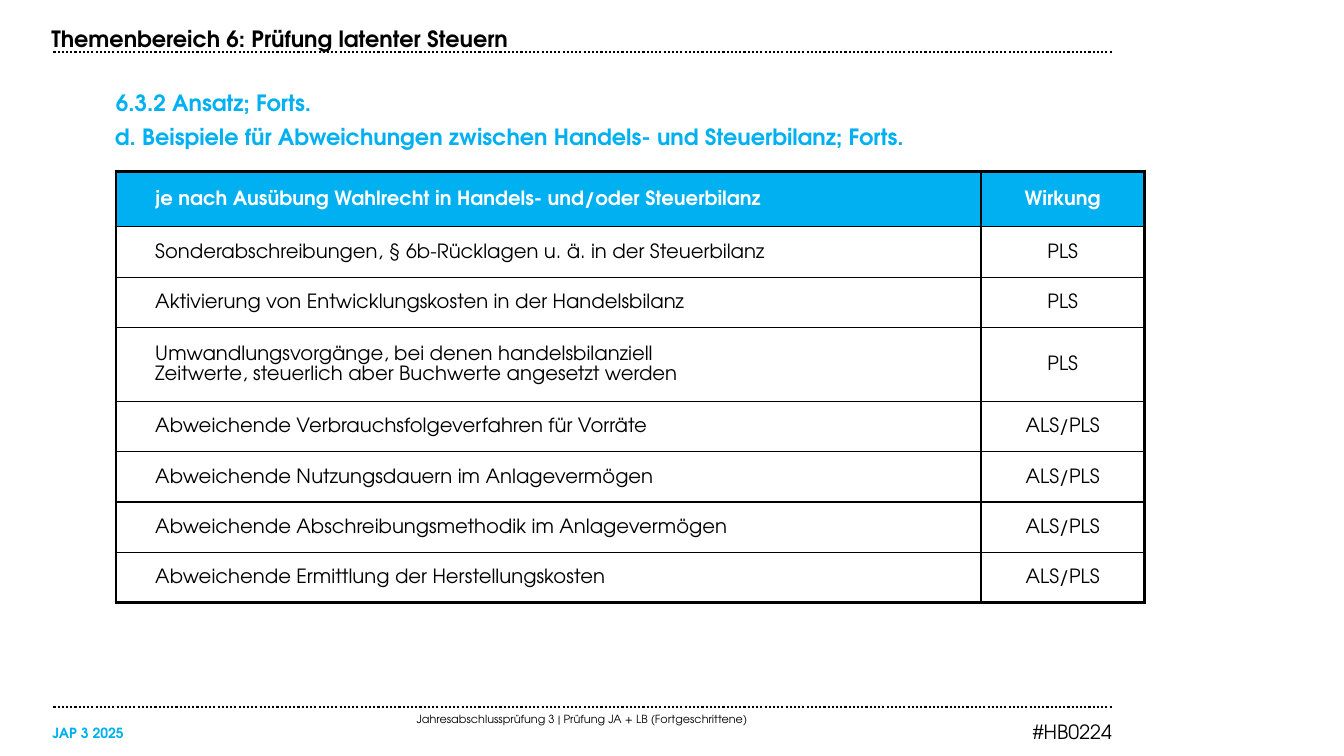
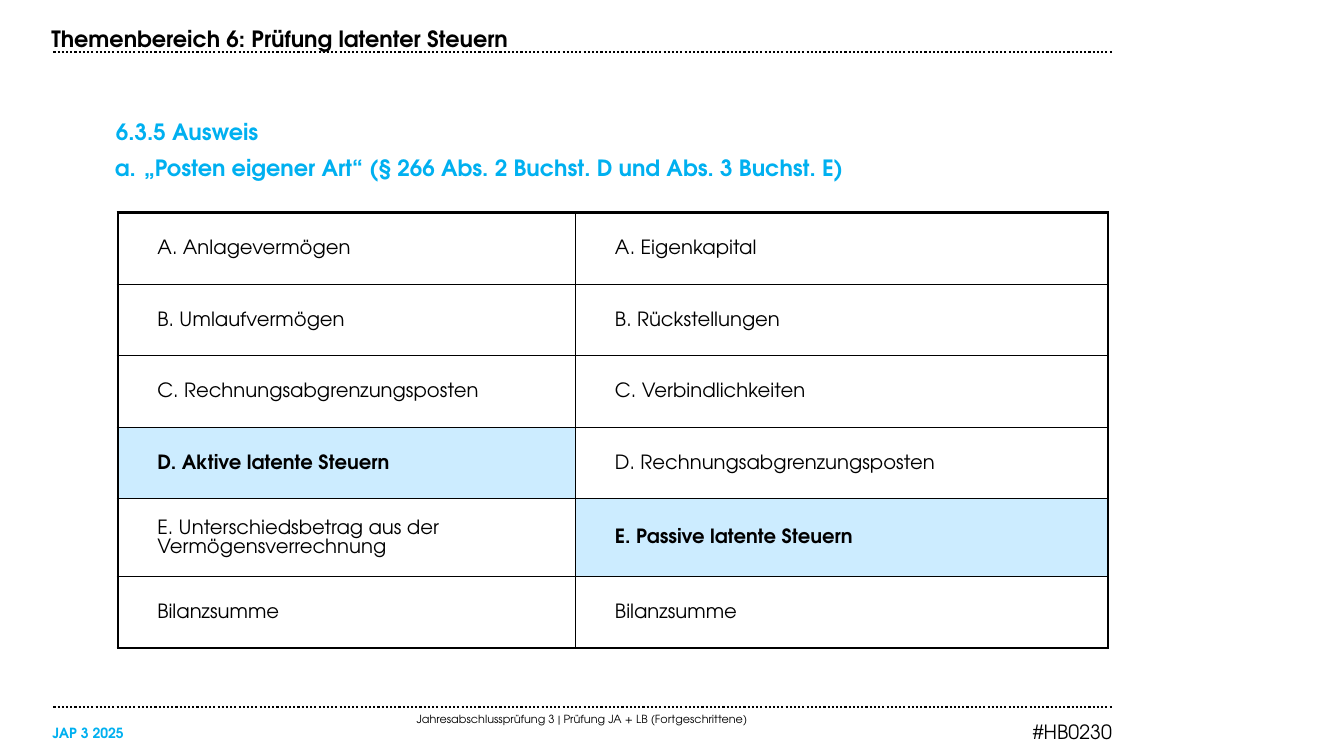
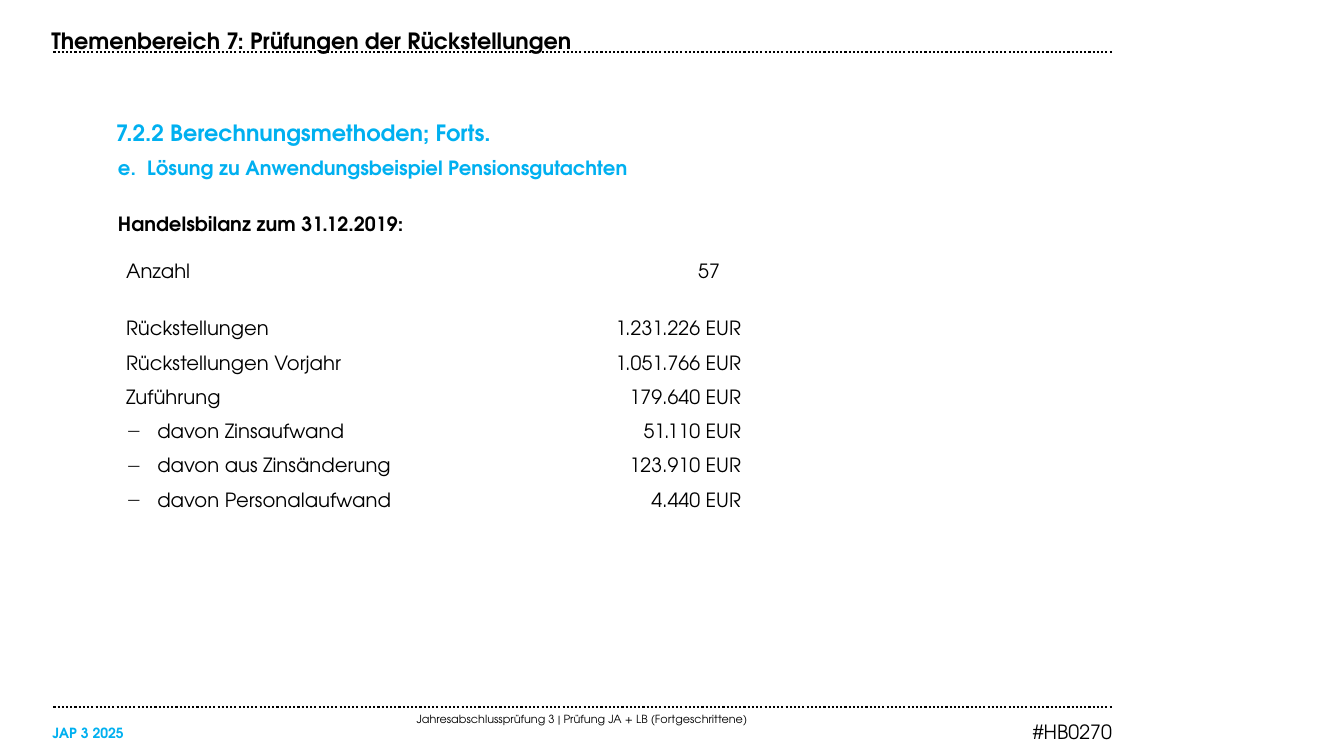
from lxml.etree import SubElement as Sub
from pptx import Presentation
from pptx.dml.color import RGBColor as Rgb
from pptx.enum.dml import MSO_LINE as Dash
from pptx.enum.shapes import MSO_CONNECTOR as Link
from pptx.enum.text import MSO_ANCHOR as Anchor, MSO_AUTO_SIZE as Fit, PP_ALIGN as Align
from pptx.oxml import parse_xml
from pptx.oxml.ns import nsdecls, qn
from pptx.util import Inches, Pt

FONT = "TeX Gyre Adventor"
BLACK, WHITE, BLUE, PALE = "000000", "FFFFFF", "00B0F0", "CCECFF"
LEFT, MID, RIGHT = Align.LEFT, Align.CENTER, Align.RIGHT


def tint(code):
    return Rgb.from_string(code)


class Deck:
    """Holds the style and the current slide of the course deck."""

    def __init__(self):
        self.prs = Presentation()
        self.prs.slide_width, self.prs.slide_height = Inches(13.33), Inches(7.5)

    def start(self, title, code, top=0.2):
        self.slide = self.prs.slides.add_slide(self.prs.slide_layouts[1])
        self.shapes = self.slide.shapes
        for y in (0.52, 7.01):
            self.rule(y)
        self.text("Jahresabschlussprüfung 3 | Prüfung JA + LB (Fortgeschrittene)",
                  (0.52, 7.07, 10.51, 0.13), 8, align=MID)
        self.text(code, (9.53, 7.14, 1.5, 0.3), 14, align=RIGHT, anchor=Anchor.TOP)
        self.text("JAP 3 2025", (0.52, 7.14, 1.05, 0.27), 10, BLUE, True)
        frame = self.place(self.shapes.title, (0.41, top, 10.95, 0.37))
        self.style(frame.paragraphs[0], title, 16, bold=True)

    def rule(self, y):
        line = self.shapes.add_connector(
            Link.STRAIGHT, Inches(0.53), Inches(y), Inches(11.04), Inches(y))
        line.line.color.rgb = tint(BLACK)
        line.line.width = Pt(1.5)
        line.line.dash_style = Dash.ROUND_DOT
        Sub(line._element.spPr, qn("a:effectLst"))

    def place(self, shape, box, anchor=Anchor.TOP):
        shape.left, shape.top, shape.width, shape.height = map(Inches, box)
        frame = shape.text_frame
        frame.word_wrap = True
        frame.auto_size = Fit.NONE
        frame.vertical_anchor = anchor
        return frame

    def style(self, para, text, size, color=BLACK, bold=False, align=LEFT):
        para.text = text
        para.alignment = align
        para.font.name = FONT
        para.font.size = Pt(size)
        para.font.bold = bold
        para.font.color.rgb = tint(color)

    def bullet(self, para, tag, indent=0, **marks):
        props = para._p.get_or_add_pPr()
        props.set("marL", str(Inches(indent)))
        props.set("indent", str(-Inches(indent)))
        Sub(props, qn(tag), marks)

    def text(self, text, box, size, color=BLACK, bold=False, align=LEFT,
             anchor=Anchor.MIDDLE):
        shape = self.shapes.add_textbox(*map(Inches, box))
        frame = self.place(shape, box, anchor)
        frame.margin_left = frame.margin_right = 0
        frame.margin_top = frame.margin_bottom = 0
        self.style(frame.paragraphs[0], text, size, color, bold, align)

    def heading(self, text, top):
        self.text(text, (1.15, top, 11.81, 0.35), 16, BLUE, True)

    def topic(self, text, left, top, size=16, start=None, note=None):
        frame = self.place(self.slide.placeholders[1], (left, top, 11.81, 0.89))
        para = frame.paragraphs[0]
        para.space_before = Pt(0)
        if start:
            self.bullet(para, "a:buAutoNum", 0.29, type="alphaLcPeriod", startAt=str(start))
        else:
            self.bullet(para, "a:buNone")
        self.style(para, text, size, BLUE, True)
        if note:
            para = frame.add_paragraph()
            para.space_before = Pt(23)
            self.bullet(para, "a:buNone")
            self.style(para, note, size, bold=True)

    def grid(self, left, top, cols, rows):
        frame = self.shapes.add_table(len(rows), len(cols), Inches(left), Inches(top),
                                      Inches(sum(cols)), Inches(sum(rows)))
        table = frame.table
        table.first_row = table.horz_banding = False
        for col, width in zip(table.columns, cols):
            col.width = Inches(width)
        for row, height in zip(table.rows, rows):
            row.height = Inches(height)
        return table

    def cell(self, cell, text, fill=WHITE, color=BLACK, bold=False, align=LEFT,
             inset=0.1, right=0.1, pad=0.05, anchor=Anchor.MIDDLE, ratio=None, dash=False):
        cell.margin_left, cell.margin_right = Inches(inset), Inches(right)
        cell.margin_top = cell.margin_bottom = Inches(pad)
        cell.vertical_anchor = anchor
        cell.fill.solid()
        cell.fill.fore_color.rgb = tint(fill)
        para = cell.text_frame.paragraphs[0]
        if ratio:
            para.line_spacing = ratio
        if dash:
            self.bullet(para, "a:buChar", 0.31, char="−")
        self.style(para, text, 14, color, bold, align)

    def frame(self, table):
        last, end = len(table.rows) - 1, len(table.columns) - 1
        for y, row in enumerate(table.rows):
            for x, cell in enumerate(row.cells):
                edges = {"L": x == 0, "R": x == end, "T": y == 0, "B": y == last}
                props = cell._tc.get_or_add_tcPr()
                for spot, (side, outer) in enumerate(edges.items()):
                    props.insert(spot, parse_xml(
                        f'<a:ln{side} {nsdecls("a")} w="{Pt(2.25 if outer else 1)}">'
                        f'<a:solidFill><a:srgbClr val="{BLACK}"/></a:solidFill></a:ln{side}>'))


def effects(deck):
    deck.start("Themenbereich 6: Prüfung latenter Steuern", "#HB0224")
    deck.heading("6.3.2 Ansatz; Forts.", 0.84)
    deck.topic("d. Beispiele für Abweichungen zwischen Handels- und Steuerbilanz; Forts.",
               1.04, 1.17)
    rows = [
        ("je nach Ausübung Wahlrecht in Handels- und/oder Steuerbilanz", "Wirkung"),
        ("Sonderabschreibungen, § 6b-Rücklagen u. ä. in der Steuerbilanz", "PLS"),
        ("Aktivierung von Entwicklungskosten in der Handelsbilanz", "PLS"),
        ("Umwandlungsvorgänge, bei denen handelsbilanziell\n"
         "Zeitwerte, steuerlich aber Buchwerte angesetzt werden", "PLS"),
        ("Abweichende Verbrauchsfolgeverfahren für Vorräte", "ALS/PLS"),
        ("Abweichende Nutzungsdauern im Anlagevermögen", "ALS/PLS"),
        ("Abweichende Abschreibungsmethodik im Anlagevermögen", "ALS/PLS"),
        ("Abweichende Ermittlung der Herstellungskosten", "ALS/PLS"),
    ]
    table = deck.grid(1.15, 1.7, (8.58, 1.62), [0.55, 0.5, 0.5, 0.73] + [0.5] * 4)
    for y, (case, effect) in enumerate(rows):
        look = dict(pad=0.08, ratio=1.1)
        if y == 0:
            look.update(fill=BLUE, color=WHITE, bold=True)
        deck.cell(table.cell(y, 0), case, inset=0.39, **look)
        deck.cell(table.cell(y, 1), effect, align=MID, **look)
    deck.frame(table)


def balance(deck):
    deck.start("Themenbereich 6: Prüfung latenter Steuern", "#HB0230")
    deck.heading("6.3.5 Ausweis", 1.13)
    deck.topic("„Posten eigener Art“ (§ 266 Abs. 2 Buchst. D und Abs. 3 Buchst. E)",
               1.04, 1.48, start=1)
    rows = [
        ("A. Anlagevermögen", "A. Eigenkapital"),
        ("B. Umlaufvermögen", "B. Rückstellungen"),
        ("C. Rechnungsabgrenzungsposten", "C. Verbindlichkeiten"),
        ("D. Aktive latente Steuern", "D. Rechnungsabgrenzungsposten"),
        ("E. Unterschiedsbetrag aus der Vermögensverrechnung", "E. Passive latente Steuern"),
        ("Bilanzsumme", "Bilanzsumme"),
    ]
    table = deck.grid(1.17, 2.11, (4.54, 5.28), [0.71] * 4 + [0.77, 0.71])
    for y, row in enumerate(rows):
        for x, text in enumerate(row):
            key = "latente" in text
            deck.cell(table.cell(y, x), text, PALE if key else WHITE, bold=key,
                      inset=0.39, ratio=1.1)
    deck.frame(table)


def pension(deck):
    deck.start("Themenbereich 7: Prüfungen der Rückstellungen", "#HB0270", 0.22)
    deck.heading("7.2.2 Berechnungsmethoden; Forts.", 1.14)
    deck.topic("Lösung zu Anwendungsbeispiel Pensionsgutachten", 1.07, 1.5, 14, 5,
               "Handelsbilanz zum 31.12.2019:")
    rows = [
        ("Anzahl", "57"),
        ("Rückstellungen", "1.231.226 EUR"),
        ("Rückstellungen Vorjahr", "1.051.766 EUR"),
        ("Zuführung", "179.640 EUR"),
        ("davon Zinsaufwand", "51.110 EUR"),
        ("davon aus Zinsänderung", "123.910 EUR"),
        ("davon Personalaufwand", "4.440 EUR"),
    ]
    table = deck.grid(1.15, 2.57, (3.15, 3.15), [0.57] + [0.34] * 6)
    for y, (item, value) in enumerate(rows):
        deck.cell(table.cell(y, 0), item, anchor=Anchor.TOP, dash=item.startswith("davon"))
        deck.cell(table.cell(y, 1), value, align=RIGHT, anchor=Anchor.TOP,
                  right=0.1 if y else 0.31)


def main():
    deck = Deck()
    for build in (effects, balance, pension):
        build(deck)
    deck.prs.save("out.pptx")


if __name__ == "__main__":
    main()
